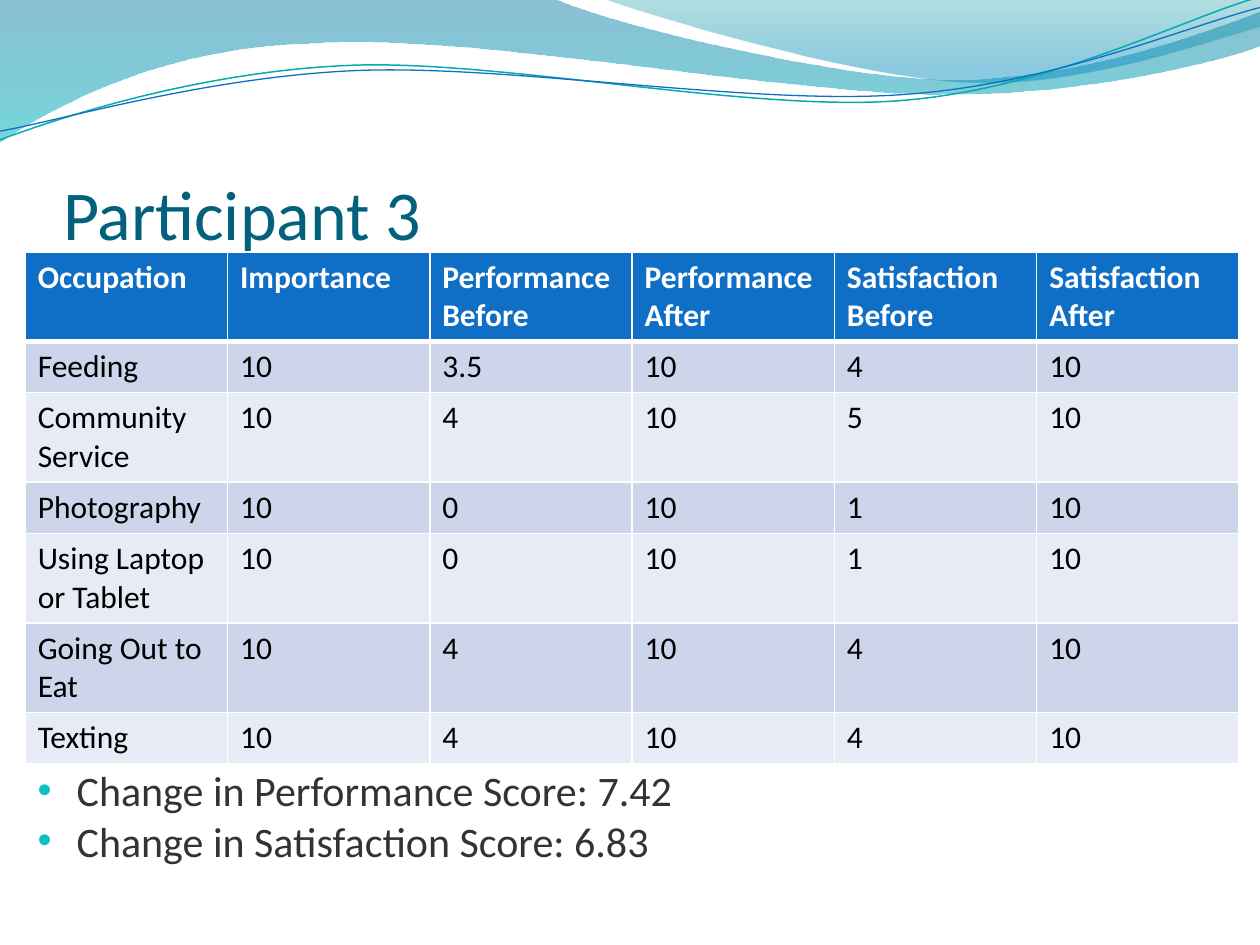
from lxml.etree import SubElement
from pptx import Presentation
from pptx.dml.color import RGBColor
from pptx.enum.text import MSO_ANCHOR, PP_ALIGN
from pptx.oxml import parse_xml
from pptx.oxml.ns import nsdecls, qn
from pptx.util import Pt

FONT = "Calibri"
WHITE = RGBColor(0xFF, 0xFF, 0xFF)
BLACK = RGBColor(0x00, 0x00, 0x00)
TITLE_TEAL = RGBColor(0x04, 0x61, 0x7B)
HEADER_BLUE = RGBColor(0x0F, 0x6F, 0xC6)
BAND_DARK = RGBColor(0xCC, 0xD5, 0xEA)
BAND_LIGHT = RGBColor(0xE7, 0xEB, 0xF5)
BODY_GREY = RGBColor(0x33, 0x33, 0x33)
BULLET_TEAL = RGBColor(0x0A, 0xBF, 0xC8)
LINE_TEAL = RGBColor(0x09, 0xA9, 0xB0)


def add_wave(start, segments, close):
    """Draw lines (x, y) and Bezier curves (x1, y1, x2, y2, x, y), in points."""
    builder = slide.shapes.build_freeform(Pt(start[0]), Pt(start[1]), scale=1.0)
    builder.add_line_segments([(Pt(s[-2]), Pt(s[-1])) for s in segments], close=close)
    wave = builder.convert_to_shape()
    wave.shadow.inherit = False
    # Turn the straight pieces that have control points into curves
    pieces = list(wave._element.spPr.iter(qn("a:lnTo")))
    for piece, segment in zip(pieces, segments):
        if len(segment) == 6:
            piece.tag = qn("a:cubicBezTo")
            for i, (x, y) in enumerate([segment[:2], segment[2:4]]):
                control = SubElement(piece, qn("a:pt"), x=str(Pt(x) - wave.left),
                                     y=str(Pt(y) - wave.top))
                piece.insert(i, control)
    return wave


def add_run(paragraph, text, size, color, bold=False):
    run = paragraph.add_run()
    run.text = text
    run.font.name = FONT
    run.font.size = Pt(size)
    run.font.bold = bold
    run.font.color.rgb = color


prs = Presentation()
prs.slide_width, prs.slide_height = Pt(720), Pt(540)
slide = prs.slides.add_slide(prs.slide_layouts[5])

# Filled waves: start, segments, gradient stops (position, colour, opacity %)
filled_waves = [
    ((0, 0),
     [(316.8, -0.7), (342.7, 12.2, 478.1, 45.4, 545.8, 45.4),
      (614.2, 45.4, 689.8, 18.7, 720, 6.5), (720.7, 25.9),
      (707.8, 31.7, 626.4, 54.7, 537.1, 54), (447.8, 54, 275, 20.2, 185, 24.5),
      (92.9, 25.9, 33.1, 59.8, -0.7, 81.4)],
     [(0, RGBColor(0x00, 0x74, 0xA1), 45), (1, RGBColor(0x00, 0xB6, 0xBF), 55)]),
    ((344.9, -0.7),
     [(366.5, 7.9, 491, 44.6, 553.7, 46.8), (616.3, 49.7, 691.9, 23, 720, 15.1),
      (720, 0)],
     [(0, RGBColor(0x00, 0x94, 0x9B), 30), (0.8, RGBColor(0x00, 0x8B, 0xBF), 45)]),
]
for start, segments, stops in filled_waves:
    wave = add_wave(start, segments, close=True)
    wave.line.fill.background()
    wave.fill.gradient()
    wave.fill.gradient_angle = 270
    for stop, (position, color, _) in zip(wave.fill.gradient_stops, stops):
        stop.position = position
        stop.color.rgb = color
    for rgb, (_, _, opacity) in zip(wave._element.spPr.iter(qn("a:srgbClr")), stops):
        SubElement(rgb, qn("a:alpha"), val=str(opacity * 1000))

# Thin wave lines
wave_lines = [
    ((0, 79.9),
     [(34.6, 67, 113.8, 41, 199.4, 37.4), (284.4, 33.8, 427, 64.1, 513.4, 57.6),
      (599.8, 51.1, 675.4, 10.8, 718.6, -1.4)], LINE_TEAL, 0.85),
    ((0, 74.9),
     [(33.8, 69.1, 118.1, 43.9, 203.8, 40.3), (290.2, 36.7, 429.8, 60.5, 516.2, 54),
      (601.9, 48.2, 677.5, 15.1, 720, 4.3)], HEADER_BLUE, 0.75),
]
for start, segments, color, width in wave_lines:
    wave = add_wave(start, segments, close=False)
    wave.fill.background()
    wave.line.color.rgb = color
    wave.line.width = Pt(width)

# Title, in front of the waves
title = slide.shapes.title
slide.shapes._spTree.append(title._element)
title.left, title.top, title.width, title.height = Pt(36), Pt(55.4), Pt(648), Pt(90)
title_frame = title.text_frame
title_frame.vertical_anchor = MSO_ANCHOR.BOTTOM
title_frame.margin_left = title_frame.margin_right = title_frame.margin_bottom = 0
title_frame.margin_top = Pt(3.6)
title_frame.paragraphs[0].alignment = PP_ALIGN.LEFT
add_run(title_frame.paragraphs[0], "Participant 3", 40, TITLE_TEAL)

# Score table
scores = [
    ("Occupation", "Importance", "Performance Before", "Performance After",
     "Satisfaction Before", "Satisfaction After"),
    ("Feeding", "10", "3.5", "10", "4", "10"),
    ("Community Service", "10", "4", "10", "5", "10"),
    ("Photography", "10", "0", "10", "1", "10"),
    ("Using Laptop or Tablet", "10", "0", "10", "1", "10"),
    ("Going Out to Eat", "10", "4", "10", "4", "10"),
    ("Texting", "10", "4", "10", "4", "10"),
]
two_line_rows = {0, 2, 4, 5}
table = slide.shapes.add_table(len(scores), len(scores[0]), Pt(14.4), Pt(144),
                               Pt(693.6), Pt(289.2)).table
for column in table.columns:
    column.width = Pt(115.6)
for r, values in enumerate(scores):
    table.rows[r].height = Pt(50.4 if r in two_line_rows else 29.2)
    header = r == 0
    fill = HEADER_BLUE if header else BAND_DARK if r % 2 else BAND_LIGHT
    for c, value in enumerate(values):
        cell = table.cell(r, c)
        add_run(cell.text_frame.paragraphs[0], value, 18,
                WHITE if header else BLACK, bold=header)
        cell.fill.solid()
        cell.fill.fore_color.rgb = fill
        # Borders go before the fill
        for i, side in enumerate("LRTB"):
            thick = (header and side == "B") or (r == 1 and side == "T")
            cell._tc.tcPr.insert(i, parse_xml(
                f'<a:ln{side} {nsdecls("a")} w="{Pt(3 if thick else 1)}">'
                f'<a:solidFill><a:srgbClr val="{WHITE}"/></a:solidFill></a:ln{side}>'))

# Score changes
changes = slide.shapes.add_textbox(Pt(14.4), Pt(433.4), Pt(687.6), Pt(65.5)).text_frame
changes.word_wrap = True
for i, text in enumerate(["Change in Performance Score: 7.42",
                          "Change in Satisfaction Score: 6.83"]):
    paragraph = changes.add_paragraph() if i else changes.paragraphs[0]
    add_run(paragraph, text, 24, BODY_GREY)
    pPr = paragraph._p.get_or_add_pPr()
    pPr.set("marL", str(Pt(22.3)))
    pPr.set("indent", str(-Pt(22.3)))
    SubElement(SubElement(pPr, qn("a:buClr")), qn("a:srgbClr"), val=str(BULLET_TEAL))
    SubElement(pPr, qn("a:buSzPct"), val="95000")
    SubElement(pPr, qn("a:buFont"), typeface="Arial")
    SubElement(pPr, qn("a:buChar"), char="•")

prs.save("out.pptx")
